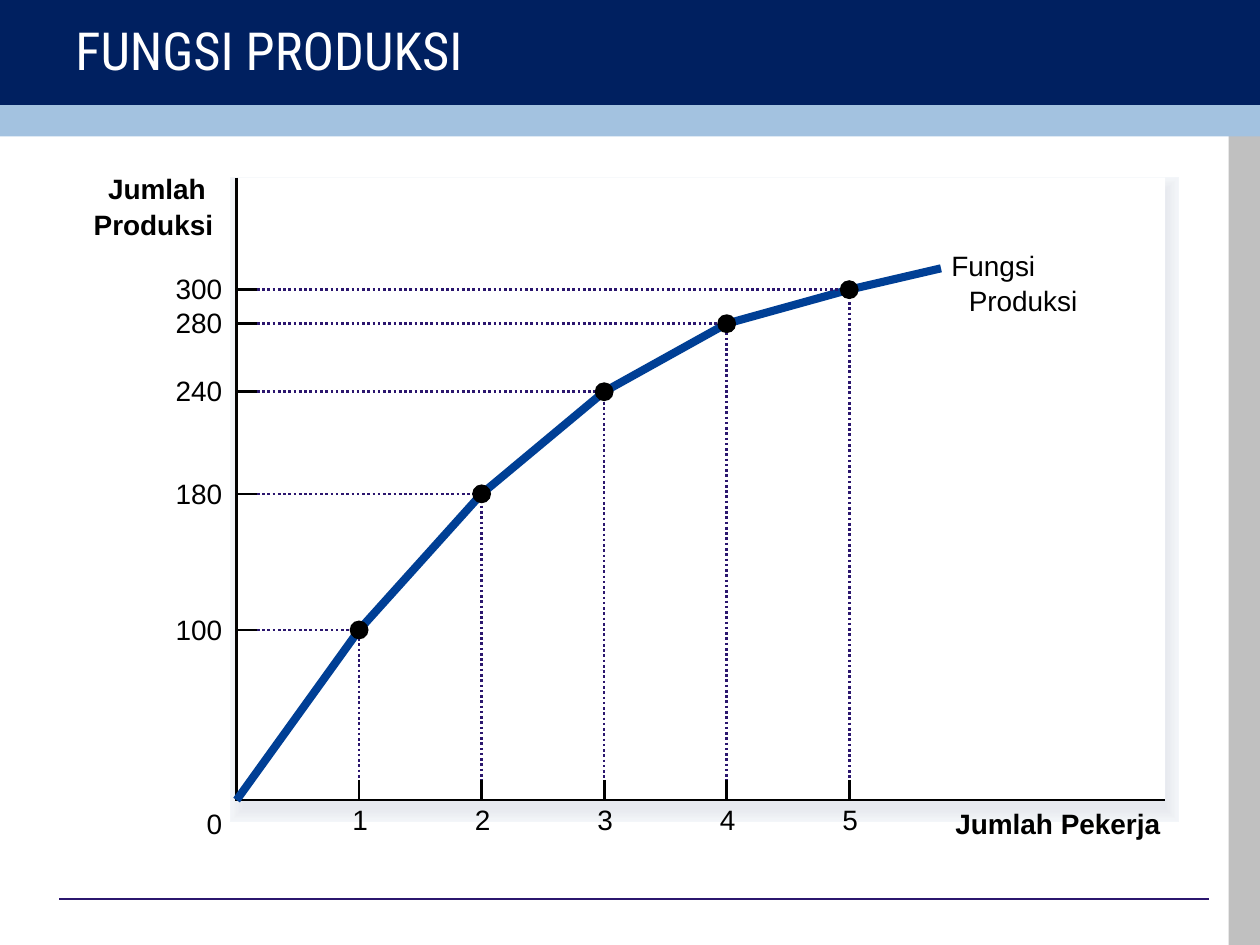
from lxml.etree import SubElement
from pptx import Presentation
from pptx.dml.color import RGBColor
from pptx.enum.dml import MSO_LINE
from pptx.enum.shapes import MSO_CONNECTOR, MSO_SHAPE
from pptx.enum.text import MSO_ANCHOR, PP_ALIGN
from pptx.oxml.ns import qn
from pptx.util import Cm, Pt

color = RGBColor.from_string

presentation = Presentation()
presentation.slide_width = Cm(25.4)
presentation.slide_height = Cm(19.05)
slide = presentation.slides.add_slide(presentation.slide_layouts[6])
shapes = slide.shapes


def add_label(text, left, top, width, align=PP_ALIGN.LEFT, bold=False):
    box = shapes.add_textbox(Cm(left), Cm(top), Cm(width), Cm(0.68))
    frame = box.text_frame
    frame.margin_left = frame.margin_right = 0
    frame.margin_top = frame.margin_bottom = 0
    frame.word_wrap = True
    paragraph = frame.paragraphs[0]
    paragraph.alignment = align
    run = paragraph.add_run()
    run.text = text
    run.font.name = "Arial"
    run.font.size = Pt(16)
    run.font.bold = bold
    run.font.color.rgb = color("000000")


def style_shape(shape, fill=None, line=None, width=1.5):
    shape.shadow.inherit = False
    if fill:
        shape.fill.solid()
        shape.fill.fore_color.rgb = color(fill)
    else:
        shape.fill.background()
    if line:
        shape.line.color.rgb = color(line)
        shape.line.width = Pt(width)
        SubElement(shape._element.spPr.find(qn("a:ln")), qn("a:miter"), lim="800000")
    else:
        shape.line.fill.background()


origin_x, origin_y = 4.77, 16.13
plot_width, plot_height = 18.72, 12.55
plot_top = origin_y - plot_height
worker_step = 2.47
hundred_step = 3.43
tick_length = 0.41
tick_top = origin_y - tick_length
outputs = [100, 180, 240, 280, 300]
points = [
    (origin_x + worker_step * workers, origin_y - hundred_step * output / 100)
    for workers, output in enumerate(outputs, 1)
]

bands = [
    (24.77, 2.72, 0.63, 16.33, "C0C0C0"),
    (0, 0, 25.4, 2.12, "002060"),
    (0, 2.12, 25.4, 0.63, "A3C2E0"),
]
for left, top, width, height, fill in bands:
    band = shapes.add_shape(MSO_SHAPE.RECTANGLE, Cm(left), Cm(top), Cm(width), Cm(height))
    style_shape(band, fill)

title = shapes.add_textbox(Cm(1.27), Cm(0.22), Cm(17.15), Cm(1.57))
title.text_frame.word_wrap = True
title.text_frame.vertical_anchor = MSO_ANCHOR.MIDDLE
title_run = title.text_frame.paragraphs[0].add_run()
title_run.text = "FUNGSI PRODUKSI"
title_run.font.name = "Roboto Condensed"
title_run.font.size = Pt(30)
title_run.font.color.rgb = color("FFFFFF")

shadow_colors = [
    "F3F6F9", "F2F4F8", "F1F4F7", "F0F2F5", "EEF1F4", "EDEFF3",
    "EBEEF2", "EAECF1", "E9EBF0", "E7EAEF", "E6E9EF",
]
for index, shade in enumerate(shadow_colors):
    shadow = shapes.add_shape(MSO_SHAPE.RECTANGLE, Cm(4.93), Cm(3.86), Cm(18.54), Cm(12.42))
    style_shape(shadow, shade, shade, 16.75 - 1.5 * index)

plot = shapes.add_shape(
    MSO_SHAPE.RECTANGLE, Cm(origin_x), Cm(plot_top), Cm(plot_width), Cm(plot_height)
)
style_shape(plot, "FFFFFF")

lines = [(1.19, 18.12, 24.38, 18.12, "2B166E", 0.75)]
for x, y in points:
    lines.append((origin_x, y, origin_x + tick_length, y, "000000", 1.5))
    lines.append((x, tick_top, x, origin_y, "000000", 1.5))
for x1, y1, x2, y2, line_color, width in lines:
    connector = shapes.add_connector(MSO_CONNECTOR.STRAIGHT, Cm(x1), Cm(y1), Cm(x2), Cm(y2))
    connector.line.color.rgb = color(line_color)
    connector.line.width = Pt(width)
    SubElement(connector._element.spPr, qn("a:effectLst"))

axes = [(origin_x, plot_top), (origin_x, origin_y), (origin_x + plot_width, origin_y)]
curve = [(origin_x, origin_y), *points, (18.97, 5.41)]
guides = [[(origin_x + tick_length, y), (x, y), (x, tick_top)] for x, y in points]
outlines = [(axes, "000000", 1.5, None), (curve, "003F95", 4.63, None)]
outlines += [(guide, "2B166E", 1.5, MSO_LINE.ROUND_DOT) for guide in guides]
for vertices, line_color, width, dash in outlines:
    vertices = [(Cm(x), Cm(y)) for x, y in vertices]
    builder = shapes.build_freeform(*vertices[0])
    builder.add_line_segments(vertices[1:], close=False)
    outline = builder.convert_to_shape()
    style_shape(outline, None, line_color, width)
    if dash:
        outline.line.dash_style = dash

dot_size = 0.38
for workers, (output, (x, y)) in enumerate(zip(outputs, points), 1):
    dot = shapes.add_shape(
        MSO_SHAPE.OVAL, Cm(x - dot_size / 2), Cm(y - dot_size / 2), Cm(dot_size), Cm(dot_size)
    )
    style_shape(dot, "000000")
    add_label(str(output), 3.28, y - 0.36, 1.2, PP_ALIGN.RIGHT)
    add_label(str(workers), x - 0.28, 16.18, 0.6, PP_ALIGN.CENTER)

add_label("0", 3.88, 16.26, 0.6, PP_ALIGN.RIGHT)
add_label("Fungsi", 19.18, 5, 2.2)
add_label("Produksi", 19.53, 5.71, 2.8)
add_label("Jumlah", 2.18, 3.45, 2.3, bold=True)
add_label("Produksi", 1.89, 4.19, 2.7, bold=True)
add_label("Jumlah Pekerja", 19.26, 16.26, 4.7, bold=True)

presentation.save("out.pptx")
